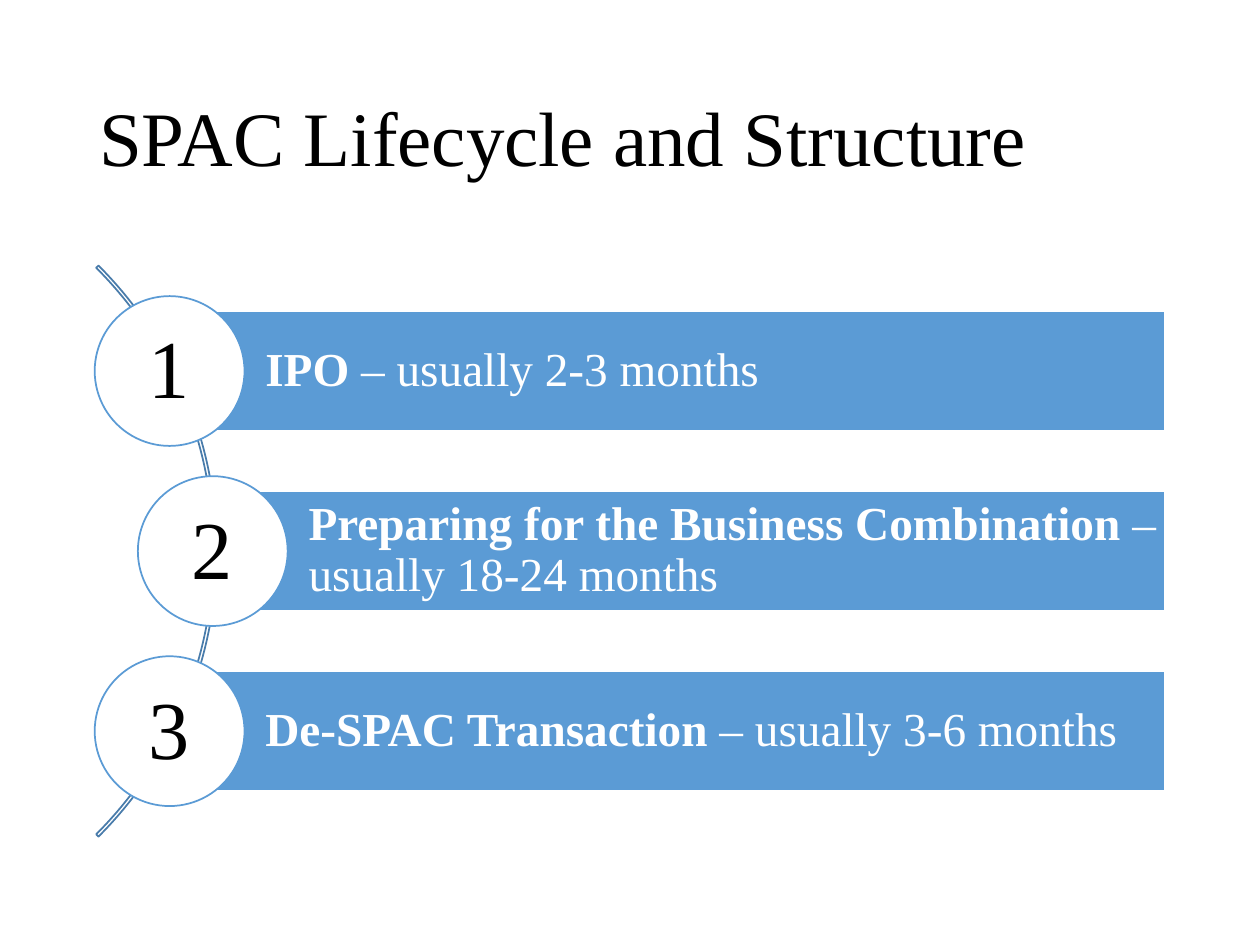
import pptx
import pptx.util
import pptx.dml.color
import pptx.enum.shapes
import pptx.enum.text

Cm = pptx.util.Cm
Pt = pptx.util.Pt
SHAPES = pptx.enum.shapes.MSO_SHAPE
MIDDLE = pptx.enum.text.MSO_ANCHOR.MIDDLE

# Content: phase name, duration, shift to the right along the arc (cm)
TITLE = "SPAC Lifecycle and Structure"
PHASES = [
    ("IPO", " – usually 2-3 months", 0),
    ("Preparing for the Business Combination ", "– usually 18-24 months", 0.87),
    ("De-SPAC Transaction ", "– usually 3-6 months", 0),
]

# Layout (cm) and colours
FIRST_CENTER_X, FIRST_CENTER_Y, PITCH = 3.42, 7.48, 3.63
BAR_RIGHT, BAR_HEIGHT = 23.49, 2.41
CIRCLE = 3.02
ARC = 16.28
BLUE, ARC_BLUE, WHITE, BLACK = "5B9BD5", "497CAB", "FFFFFF", "000000"


def color(hex_string):
    return pptx.dml.color.RGBColor.from_string(hex_string)


def style_run(run, size, hex_string, bold=False):
    run.font.name = "Times New Roman"
    run.font.size = Pt(size)
    run.font.bold = bold
    run.font.color.rgb = color(hex_string)


def add_shape(kind, left, top, width, height, fill, line):
    shape = slide.shapes.add_shape(kind, Cm(left), Cm(top), Cm(width), Cm(height))
    shape.shadow.inherit = False
    if fill:
        shape.fill.solid()
        shape.fill.fore_color.rgb = color(fill)
    else:
        shape.fill.background()
    shape.line.color.rgb = color(line)
    shape.line.width = Pt(1)
    return shape


def add_label(text, left, top, width, height, size):
    box = slide.shapes.add_textbox(Cm(left), Cm(top), Cm(width), Cm(height))
    box.text_frame.word_wrap = True
    box.text_frame.text = text
    style_run(box.text_frame.paragraphs[0].runs[0], size, BLACK)
    return box.text_frame


deck = pptx.Presentation()
deck.slide_width, deck.slide_height = Cm(25.4), Cm(19.05)
slide = deck.slides.add_slide(deck.slide_layouts[6])

# Title
title = add_label(TITLE, 1.75, 1.02, 21.9, 3.68, 44)
title.vertical_anchor = MIDDLE
title.paragraphs[0].line_spacing = 0.9

# Arc behind the phases, centred on the middle phase
middle_y = FIRST_CENTER_Y + PITCH * (len(PHASES) - 1) / 2
arc = add_shape(SHAPES.BLOCK_ARC, -11.91, middle_y - ARC / 2, ARC, ARC, None, ARC_BLUE)
for index, value in enumerate((189, 27, 0.004)):
    arc.adjustments[index] = value

# Phase bars, each starting at the centre of its circle
for row, (phase, duration, shift) in enumerate(PHASES):
    center_x = FIRST_CENTER_X + shift
    center_y = FIRST_CENTER_Y + row * PITCH
    bar = add_shape(SHAPES.RECTANGLE, center_x, center_y - BAR_HEIGHT / 2,
                    BAR_RIGHT - center_x, BAR_HEIGHT, BLUE, WHITE)
    frame = bar.text_frame
    frame.word_wrap = True
    frame.vertical_anchor = MIDDLE
    frame.margin_left = Cm(1.93)
    frame.margin_top = frame.margin_right = frame.margin_bottom = Cm(0.18)
    paragraph = frame.paragraphs[0]
    paragraph.alignment = pptx.enum.text.PP_ALIGN.LEFT
    paragraph.line_spacing = 0.9
    for text, bold in ((phase, True), (duration, False)):
        run = paragraph.add_run()
        run.text = text
        style_run(run, 27, WHITE, bold)
    add_shape(SHAPES.OVAL, center_x - CIRCLE / 2, center_y - CIRCLE / 2,
              CIRCLE, CIRCLE, WHITE, BLUE)

# Phase numbers
for row, (_, _, shift) in enumerate(PHASES):
    number = add_label(str(row + 1), FIRST_CENTER_X + shift - 0.67,
                       FIRST_CENTER_Y + row * PITCH - 1.22, 2.29, 2.36, 47)
    number.auto_size = pptx.enum.text.MSO_AUTO_SIZE.SHAPE_TO_FIT_TEXT

deck.save("out.pptx")
